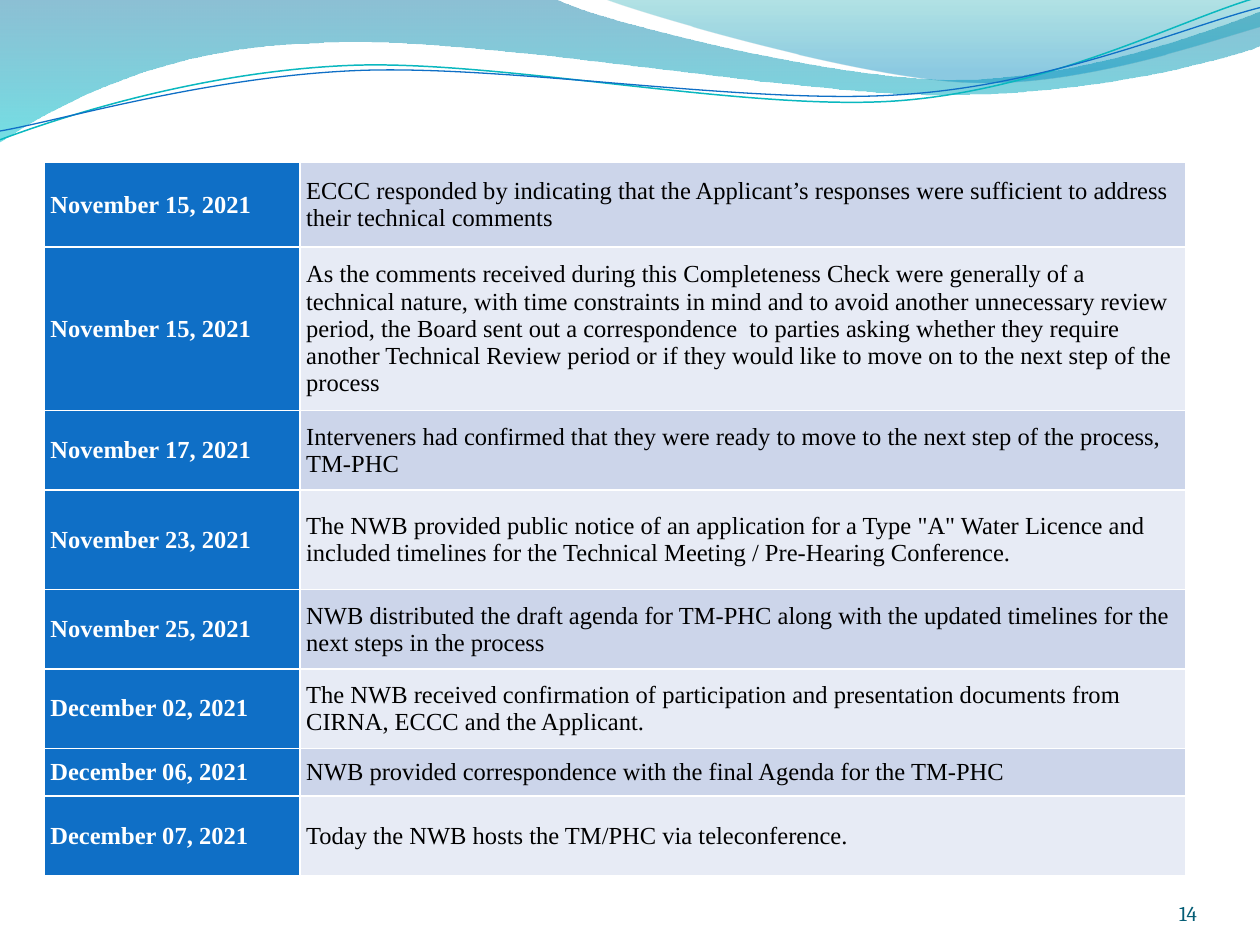
import math

from lxml import etree
from pptx import Presentation
from pptx import util as u
from pptx.dml.color import RGBColor
from pptx.enum import text
from pptx.oxml import ns

WHITE = RGBColor(0xFF, 0xFF, 0xFF)
BLACK = RGBColor(0x00, 0x00, 0x00)
BLUE = RGBColor(0x0F, 0x6F, 0xC6)
TEAL = RGBColor(0x0A, 0xB8, 0xBF)
NUMBER_COLOR = RGBColor(0x04, 0x5D, 0x75)
BAND_COLORS = (RGBColor(0xCC, 0xD5, 0xEA), RGBColor(0xE7, 0xEB, 0xF5))

# Gradient stops: position, colour, opacity in percent
BROAD_GRADIENT = ((0, RGBColor(0x00, 0x74, 0xA1), 45), (1, RGBColor(0x00, 0xC6, 0xCF), 55))
RIGHT_GRADIENT = ((0, RGBColor(0x00, 0xA1, 0xA9), 30), (0.8, RGBColor(0x00, 0x8B, 0xBF), 45))

# Outlines in inches: a pair of numbers is a corner, six numbers a Bezier curve
BROAD_WAVE = [
    (0, 0), (4.4, -0.01),
    (4.76, 0.17, 6.64, 0.63, 7.58, 0.63), (8.53, 0.63, 9.58, 0.26, 10, 0.09),
    (10.01, 0.36),
    (9.83, 0.44, 8.7, 0.76, 7.46, 0.75), (6.22, 0.75, 3.82, 0.28, 2.57, 0.34),
    (1.29, 0.36, 0.46, 0.83, -0.01, 1.13), (0, 0),
]
RIGHT_WAVE = [
    (4.79, -0.01),
    (5.09, 0.11, 6.82, 0.62, 7.69, 0.65), (8.56, 0.69, 9.61, 0.32, 10, 0.21),
    (10, 0), (4.79, -0.01),
]
TEAL_LINE = [
    (0, 1.11),
    (0.48, 0.93, 1.58, 0.57, 2.77, 0.52), (3.95, 0.47, 5.93, 0.89, 7.13, 0.8),
    (8.33, 0.71, 9.38, 0.15, 9.98, -0.02),
]
BLUE_LINE = [
    (0, 1.04),
    (0.47, 0.96, 1.64, 0.61, 2.83, 0.56), (4.03, 0.51, 5.97, 0.84, 7.17, 0.75),
    (8.36, 0.67, 9.41, 0.21, 10, 0.06),
]
LINE_ROTATION = 357.3

COLUMN_SHARES = (2.03, 7.03)
# Row height, date, event
EVENTS = [
    (0.67, "November 15, 2021", "ECCC responded by indicating that the Applicant’s responses "
     "were sufficient to address their technical comments"),
    (1.3, "November 15, 2021", "As the comments received during this Completeness Check were "
     "generally of a technical nature, with time constraints in mind and to avoid another "
     "unnecessary review period, the Board sent out a correspondence  to parties asking whether "
     "they require another Technical Review period or if they would like to move on to the next "
     "step of the process"),
    (0.63, "November 17, 2021", "Interveners had confirmed that they were ready to move to the "
     "next step of the process, TM-PHC"),
    (0.79, "November 23, 2021", "The NWB provided public notice of an application for a Type "
     "\"A\" Water Licence and included timelines for the Technical Meeting / Pre-Hearing "
     "Conference."),
    (0.63, "November 25, 2021", "NWB distributed the draft agenda for TM-PHC along with the "
     "updated timelines for the next steps in the process"),
    (0.63, "December 02, 2021", "The NWB received confirmation of participation and presentation "
     "documents from CIRNA, ECCC and the Applicant."),
    (0.38, "December 06, 2021", "NWB provided correspondence with the final Agenda for the TM-PHC"),
    (0.63, "December 07, 2021", "Today the NWB hosts the TM/PHC via teleconference."),
]


def write_text(frame, words, font="Times New Roman", size=14, color=BLACK, bold=False,
               align=text.PP_ALIGN.LEFT):
    paragraph = frame.paragraphs[0]
    paragraph.alignment = align
    run = paragraph.add_run()
    run.text = words
    run.font.name = font
    run.font.size = u.Pt(size)
    run.font.bold = bold
    run.font.color.rgb = color


def add_outline(slide, outline, box, rotation=0, closed=False):
    """Draw corners and curves as a freeform that fills the given box."""
    corners = [(u.Inches(part[-2]), u.Inches(part[-1])) for part in outline]
    builder = slide.shapes.build_freeform(*corners[0])
    builder.add_line_segments(corners[1:], close=closed)
    shape = builder.convert_to_shape()
    shape.shadow.inherit = False
    left, top, width, height = box
    shape.left, shape.top, shape.width, shape.height = map(u.Inches, box)
    shape.rotation = rotation

    # Points are stored in the box as it lies before its rotation
    sine, cosine = math.sin(math.radians(-rotation)), math.cos(math.radians(-rotation))
    curve = next(shape._element.iter(ns.qn("a:path")))
    curve.clear()
    curve.set("w", str(shape.width))
    curve.set("h", str(shape.height))
    for index, part in enumerate(outline):
        kind = "moveTo" if index == 0 else "lnTo" if len(part) == 2 else "cubicBezTo"
        segment = etree.SubElement(curve, ns.qn("a:" + kind))
        for x, y in zip(part[::2], part[1::2]):
            dx, dy = x - left - width / 2, y - top - height / 2
            etree.SubElement(segment, ns.qn("a:pt"),
                             x=str(u.Inches(width / 2 + dx * cosine - dy * sine)),
                             y=str(u.Inches(height / 2 + dx * sine + dy * cosine)))
    if closed:
        etree.SubElement(curve, ns.qn("a:close"))
    return shape


def add_wave(slide, outline, stops, box):
    shape = add_outline(slide, outline, box, closed=True)
    shape.line.fill.background()
    shape.fill.gradient()
    shape.fill.gradient_angle = 270
    for stop, (position, color, _) in zip(shape.fill.gradient_stops, stops):
        stop.position = position
        stop.color.rgb = color
    # Opacity of each stop
    colors = shape._element.spPr.iter(ns.qn("a:srgbClr"))
    for element, (_, _, opacity) in zip(colors, stops):
        etree.SubElement(element, ns.qn("a:alpha"), val=str(opacity * 1000))


def add_wave_line(slide, outline, color, width, box):
    shape = add_outline(slide, outline, box, rotation=LINE_ROTATION)
    shape.fill.background()
    shape.line.color.rgb = color
    shape.line.width = u.Pt(width)


def add_header(slide):
    add_wave(slide, BROAD_WAVE, BROAD_GRADIENT, (-0.01, -0.01, 10.02, 1.14))
    add_wave(slide, RIGHT_WAVE, RIGHT_GRADIENT, (4.79, -0.01, 5.21, 0.7))
    add_wave_line(slide, TEAL_LINE, TEAL, 0.85, (-0.02, 0.22, 10.02, 0.71))
    add_wave_line(slide, BLUE_LINE, BLUE, 0.75, (-0.02, 0.3, 10.03, 0.58))


def format_cell(cell, words, fill, **text_format):
    cell.margin_left = cell.margin_right = u.Inches(0.05)
    cell.margin_top = cell.margin_bottom = 0
    cell.vertical_anchor = text.MSO_ANCHOR.MIDDLE
    properties = cell._tc.get_or_add_tcPr()
    for side in ("lnL", "lnR", "lnT", "lnB"):
        border = etree.SubElement(properties, ns.qn("a:" + side), w=str(u.Pt(1)))
        solid = etree.SubElement(border, ns.qn("a:solidFill"))
        etree.SubElement(solid, ns.qn("a:srgbClr"), val=str(WHITE))
    cell.fill.solid()
    cell.fill.fore_color.rgb = fill
    write_text(cell.text_frame, words, **text_format)


def add_timeline(slide, left, top, width, height):
    frame = slide.shapes.add_table(len(EVENTS), len(COLUMN_SHARES), u.Inches(left),
                                   u.Inches(top), u.Inches(width), u.Inches(height))
    table = frame.table
    table.first_row = table.horz_banding = False
    for column, share in zip(table.columns, COLUMN_SHARES):
        column.width = u.Inches(width * share / sum(COLUMN_SHARES))
    total = sum(event[0] for event in EVENTS)
    for index, (row_height, date, event) in enumerate(EVENTS):
        table.rows[index].height = u.Inches(height * row_height / total)
        format_cell(table.cell(index, 0), date, BLUE, color=WHITE, bold=True)
        format_cell(table.cell(index, 1), event, BAND_COLORS[index % 2])


def add_slide_number(slide, number, left, top, width, height):
    box = slide.shapes.add_textbox(u.Inches(left), u.Inches(top),
                                   u.Inches(width), u.Inches(height))
    frame = box.text_frame
    frame.word_wrap = True
    frame.vertical_anchor = text.MSO_ANCHOR.BOTTOM
    frame.margin_left = frame.margin_right = frame.margin_top = frame.margin_bottom = 0
    write_text(frame, number, font="Cambria", size=12, color=NUMBER_COLOR,
               align=text.PP_ALIGN.RIGHT)


def main():
    presentation = Presentation()
    presentation.slide_width = u.Inches(10)
    presentation.slide_height = u.Inches(7.5)
    slide = presentation.slides.add_slide(presentation.slide_layouts[6])
    add_header(slide)
    add_slide_number(slide, "14", 8.67, 6.95, 0.83, 0.4)
    add_timeline(slide, 0.35, 1.29, 9.06, 5.66)
    presentation.save("out.pptx")


if __name__ == "__main__":
    main()
